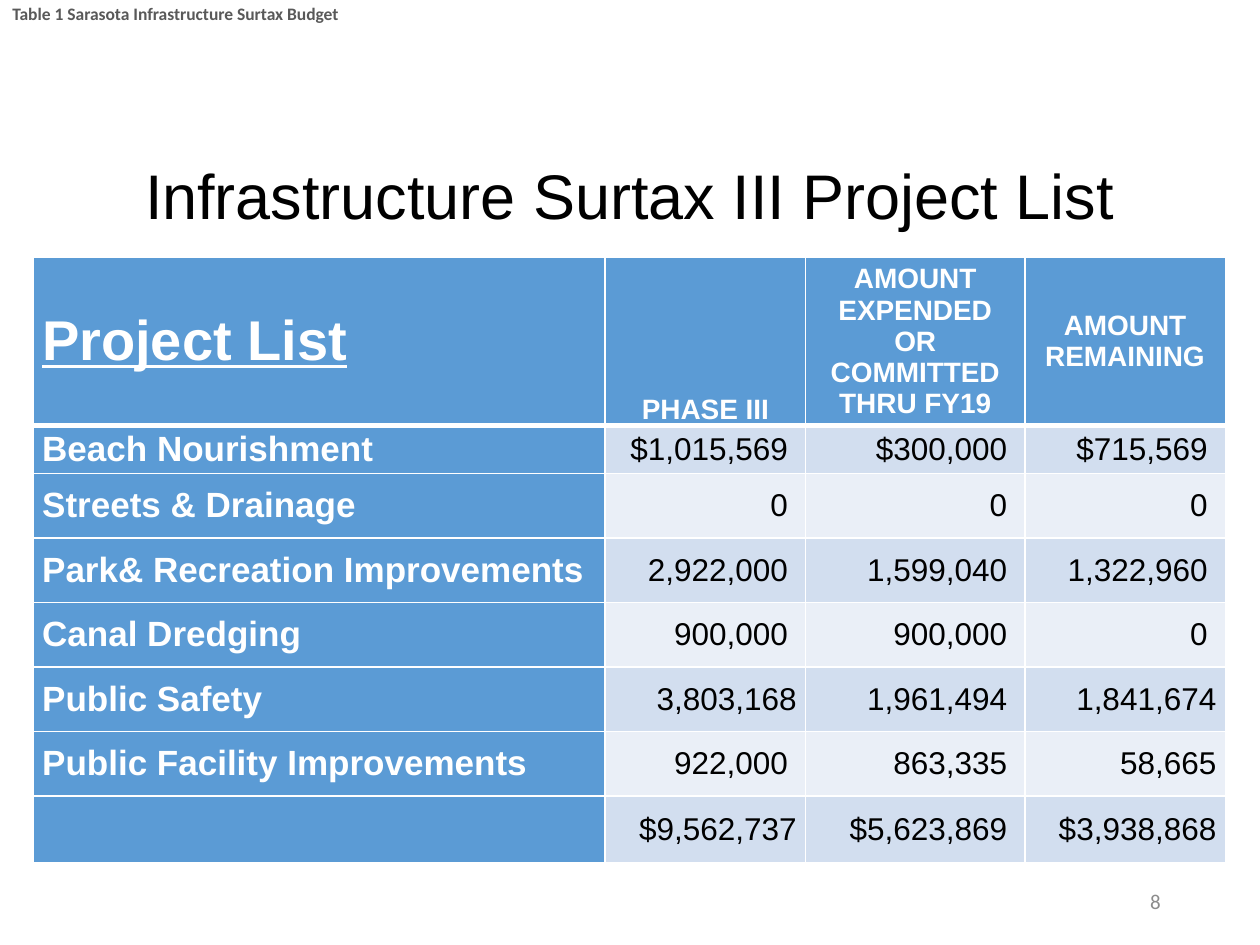
from lxml import etree
from pptx import Presentation
from pptx import util as u
from pptx.dml.color import RGBColor
from pptx.enum import text
from pptx.oxml import ns

WHITE = RGBColor(0xFF, 0xFF, 0xFF)
BLACK = RGBColor(0x00, 0x00, 0x00)
BLUE = RGBColor(0x5B, 0x9B, 0xD5)
BAND_DARK = RGBColor(0xD2, 0xDE, 0xEF)
BAND_LIGHT = RGBColor(0xEA, 0xEF, 0xF7)
CAPTION_GREY = RGBColor(0x59, 0x59, 0x59)
NUMBER_GREY = RGBColor(0x8C, 0x8C, 0x8C)

LEFT, CENTER, RIGHT = text.PP_ALIGN.LEFT, text.PP_ALIGN.CENTER, text.PP_ALIGN.RIGHT
MIDDLE, BOTTOM, TOP = text.MSO_ANCHOR.MIDDLE, text.MSO_ANCHOR.BOTTOM, text.MSO_ANCHOR.TOP

COLUMNS = [11.53, 4.04, 4.42, 4.04]
ROWS = [3.38, 0.97] + [1.3] * 5 + [1.35]
PROJECTS = [
    ["Project List", "PHASE III", "AMOUNT EXPENDED OR COMMITTED THRU FY19", "AMOUNT REMAINING"],
    ["Beach Nourishment", "$1,015,569 ", "$300,000 ", "$715,569 "],
    ["Streets & Drainage", "0 ", "0 ", "0 "],
    ["Park& Recreation Improvements", "2,922,000 ", "1,599,040 ", "1,322,960 "],
    ["Canal Dredging", "900,000 ", "900,000 ", "0 "],
    ["Public Safety", "3,803,168", "1,961,494 ", "1,841,674"],
    ["Public Facility Improvements", "922,000 ", "863,335 ", "58,665"],
    ["", "$9,562,737", "$5,623,869 ", "$3,938,868"],
]


def write(frame, words, size, color, align=LEFT, name="Arial", bold=False):
    """Put one formatted paragraph in a text frame and return it."""
    frame.text = words
    para = frame.paragraphs[0]
    para.alignment = align
    font = para.font
    font.size, font.name, font.bold = u.Pt(size), name, bold
    font.color.rgb = color
    return para


def add_label(page, box, words, size, color, align, anchor, bold=False):
    """Add a small Calibri text box."""
    frame = page.shapes.add_textbox(*map(u.Cm, box)).text_frame
    frame.word_wrap = True
    frame.vertical_anchor = anchor
    frame.margin_top = frame.margin_bottom = u.Cm(0.07)
    write(frame, words, size, color, align, "Calibri", bold)


def set_title(page, box, words):
    """Move and format the title placeholder."""
    title = page.shapes.title
    title.left, title.top, title.width, title.height = map(u.Cm, box)
    frame = title.text_frame
    frame.auto_size = text.MSO_AUTO_SIZE.NONE
    frame.vertical_anchor = MIDDLE
    write(frame, words, 36, BLACK, CENTER).line_spacing = 0.9


def set_borders(cell, top, bottom):
    """Draw white cell borders, with top and bottom widths in points."""
    widths = {"a:lnL": 1, "a:lnR": 1, "a:lnT": top, "a:lnB": bottom}
    properties = cell._tc.get_or_add_tcPr()
    for place, (tag, width) in enumerate(widths.items()):
        line = etree.Element(ns.qn(tag), w=str(u.Pt(width)))
        fill = etree.SubElement(line, ns.qn("a:solidFill"))
        etree.SubElement(fill, ns.qn("a:srgbClr"), val=str(WHITE))
        properties.insert(place, line)


def format_cell(cell, words, row, column):
    """Fill one cell and style it by its row and column."""
    header, label = row == 0, column == 0
    cell.margin_left = cell.margin_right = u.Cm(0.18)
    cell.margin_top = cell.margin_bottom = 0
    cell.vertical_anchor = BOTTOM if header and column == 1 else MIDDLE
    cell.fill.solid()
    band = BAND_DARK if row % 2 else BAND_LIGHT
    cell.fill.fore_color.rgb = BLUE if header or label else band
    set_borders(cell, 3 if row == 1 else 1, 3 if header else 1)
    if label:
        size, align = (32 if header else 20), LEFT
    else:
        size, align = (16, CENTER) if header else (18, RIGHT)
    strong = header or label
    para = write(cell.text_frame, words, size, WHITE if strong else BLACK, align, bold=strong)
    para.font.underline = header and label


def add_project_table(page, left, top):
    """Add the project budget table at the given corner."""
    frame = page.shapes.add_table(len(ROWS), len(COLUMNS), u.Cm(left), u.Cm(top),
                                  u.Cm(sum(COLUMNS)), u.Cm(sum(ROWS)))
    table = frame.table
    for column, width in zip(table.columns, COLUMNS):
        column.width = u.Cm(width)
    for row, height in zip(table.rows, ROWS):
        row.height = u.Cm(height)
    for row, entries in enumerate(PROJECTS):
        for column, words in enumerate(entries):
            format_cell(table.cell(row, column), words, row, column)


def main():
    """Build the deck and save it."""
    deck = Presentation()
    deck.slide_width, deck.slide_height = u.Cm(25.4), u.Cm(19.05)
    page = deck.slides.add_slide(deck.slide_layouts[5])
    add_label(page, (17.93, 17.65, 5.72, 1.02), "8", 12, NUMBER_GREY, RIGHT, MIDDLE)
    set_title(page, (1.75, 3.23, 21.9, 1.55), "Infrastructure Surtax III Project List")
    add_label(page, (0, 0, 25.4, 1.27), "Table 1 Sarasota Infrastructure Surtax Budget",
              10, CAPTION_GREY, LEFT, TOP, bold=True)
    add_project_table(page, 0.67, 5.19)
    deck.save("out.pptx")


if __name__ == "__main__":
    main()
